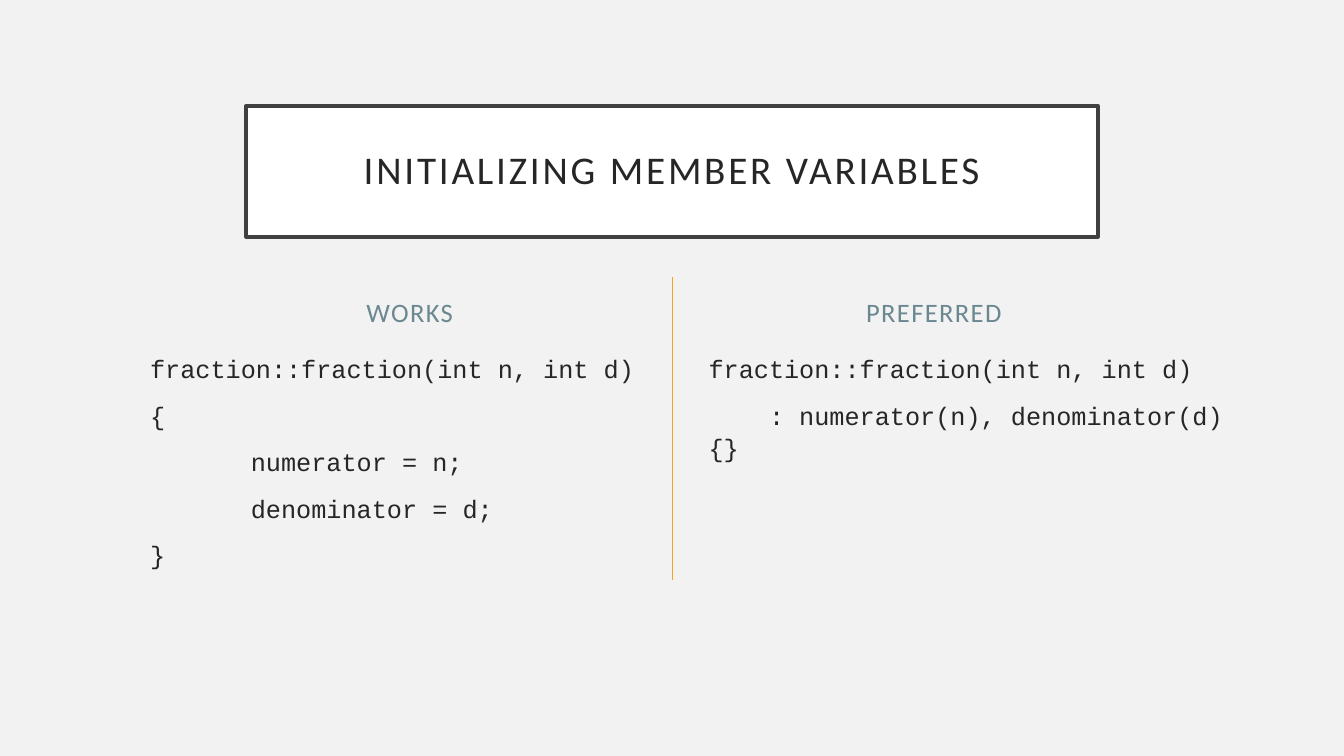
from pptx import Presentation
from pptx.dml.color import RGBColor
from pptx.enum import shapes, text
from pptx.oxml import parse_xml
from pptx.util import Pt

TITLE = "INITIALIZING MEMBER VARIABLES"
SIGN = "fraction::fraction(int n, int d)"
PANES = [
    {"head": "WORKS", "head_x": 124.6, "code_x": 100.1, "code_w": 360.7,
     "code": [(0, SIGN), (0, "{"), (72, "numerator = n;"),
              (72, "denominator = d;"), (0, "}")]},
    {"head": "PREFERRED", "head_x": 499, "code_x": 499, "code_w": 413.2,
     "code": [(0, SIGN), (43.2, ": numerator(n), denominator(d) {}")]},
]

PAPER = RGBColor(0xF2, 0xF2, 0xF2)
WHITE = RGBColor(0xFF, 0xFF, 0xFF)
INK = RGBColor(0x26, 0x26, 0x26)
FRAME = RGBColor(0x40, 0x40, 0x40)
TEAL = RGBColor(0x6B, 0x88, 0x91)
GOLD = RGBColor(0xF6, 0xA2, 0x1D)

WIDE, HIGH = 960, 540
HEAD_Y, HEAD_W, HEAD_H = 182.2, 336.2, 55.4
CODE_Y, CODE_H = 247.7, 204.5
TITLE_Y, TITLE_W, TITLE_H = 75.6, 608.4, 93.6
RULE_Y, RULE_H = 198, 216


def style(para, line, face, size, color, track=0):
    run = para.add_run()
    run.text = line
    para.font.name = face
    para.font.size = Pt(size)
    para.font.color.rgb = color
    if track:
        run.font._element.set("spc", str(track * 100))


def add_box(slide, x, y, w, h, anchor):
    box = slide.shapes.add_textbox(Pt(x), Pt(y), Pt(w), Pt(h))
    frame = box.text_frame
    frame.word_wrap = True
    frame.vertical_anchor = anchor
    return frame


def add_pane(slide, pane):
    frame = add_box(slide, pane["head_x"], HEAD_Y, HEAD_W, HEAD_H,
                    text.MSO_ANCHOR.BOTTOM)
    para = frame.paragraphs[0]
    para.alignment = text.PP_ALIGN.CENTER
    style(para, pane["head"], "Calibri", 19, TEAL, 1)

    frame = add_box(slide, pane["code_x"], CODE_Y, pane["code_w"], CODE_H,
                    text.MSO_ANCHOR.TOP)
    for i, (indent, line) in enumerate(pane["code"]):
        para = frame.add_paragraph() if i else frame.paragraphs[0]
        para.space_before = Pt(10)
        para.line_spacing = 1.07
        style(para, line, "Courier New", 18, INK)
        if indent:
            props = para._p.get_or_add_pPr()
            props.set("marL", "0")
            props.set("indent", str(int(Pt(indent))))


def add_title(slide):
    box = slide.shapes.add_shape(
        shapes.MSO_SHAPE.RECTANGLE, Pt((WIDE - TITLE_W) / 2), Pt(TITLE_Y),
        Pt(TITLE_W), Pt(TITLE_H))
    box.shadow.inherit = False
    box.fill.solid()
    box.fill.fore_color.rgb = WHITE
    box.line.color.rgb = FRAME
    box.line.width = Pt(2.5)
    frame = box.text_frame
    frame.word_wrap = True
    frame.vertical_anchor = text.MSO_ANCHOR.MIDDLE
    frame.margin_left = frame.margin_right = Pt(14.4)
    frame.margin_top = frame.margin_bottom = Pt(14.4)
    para = frame.paragraphs[0]
    para.alignment = text.PP_ALIGN.CENTER
    para.line_spacing = 0.9
    style(para, TITLE, "Calibri", 28, INK, 2)


def add_rule(slide):
    rule = slide.shapes.add_connector(
        shapes.MSO_CONNECTOR.STRAIGHT, Pt(WIDE / 2), Pt(RULE_Y),
        Pt(WIDE / 2), Pt(RULE_Y + RULE_H))
    rule.line.color.rgb = GOLD
    rule.line.width = Pt(0.5)
    rule._element.spPr.append(parse_xml(
        '<a:effectLst xmlns:a='
        '"http://schemas.openxmlformats.org/drawingml/2006/main"/>'))


def main():
    deck = Presentation()
    deck.slide_width, deck.slide_height = Pt(WIDE), Pt(HIGH)
    slide = deck.slides.add_slide(deck.slide_layouts[6])
    slide.background.fill.solid()
    slide.background.fill.fore_color.rgb = PAPER
    for pane in PANES:
        add_pane(slide, pane)
    add_title(slide)
    add_rule(slide)
    deck.save("out.pptx")


if __name__ == "__main__":
    main()
